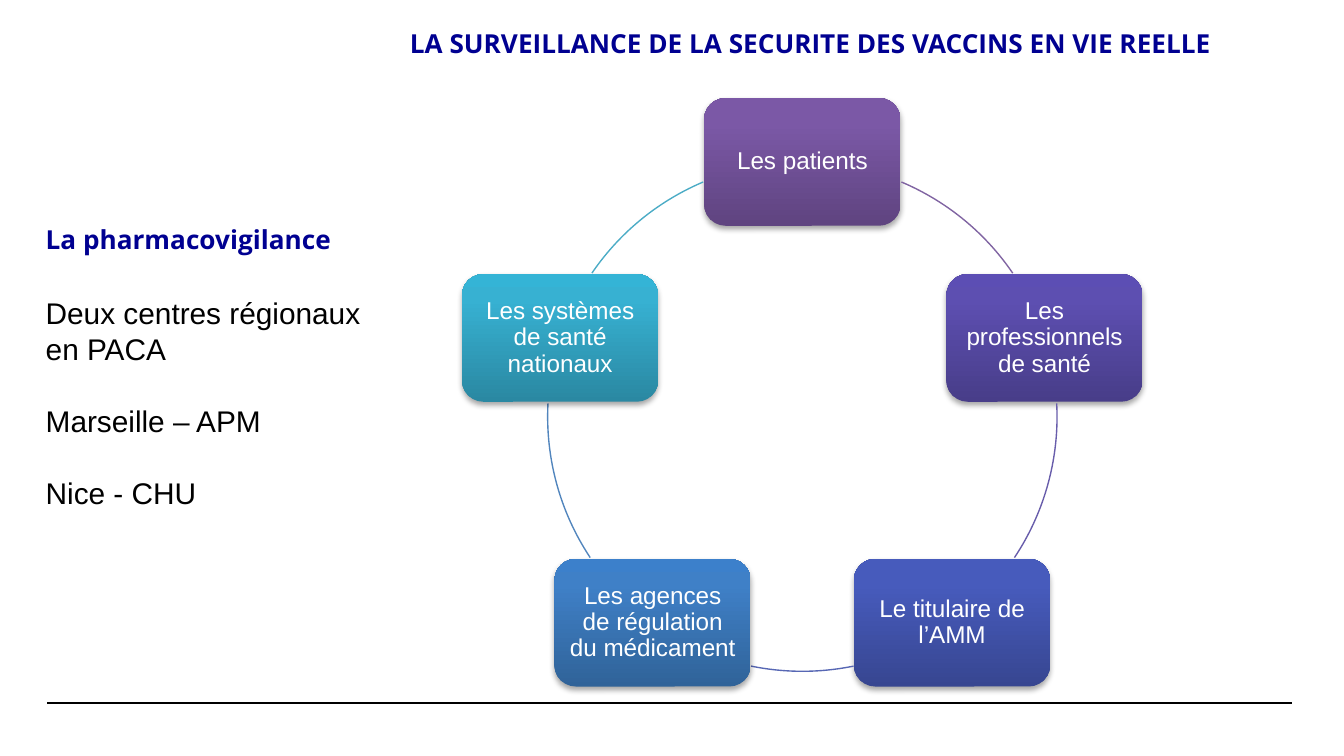
import math
from typing import NamedTuple

from pptx import Presentation
from pptx.dml.color import RGBColor
from pptx.enum.shapes import MSO_CONNECTOR, MSO_SHAPE
from pptx.enum.text import MSO_ANCHOR, MSO_AUTO_SIZE, PP_ALIGN
from pptx.oxml import parse_xml
from pptx.oxml.ns import nsdecls
from pptx.util import Inches, Pt

STRAIGHT = MSO_CONNECTOR.STRAIGHT
ROUNDED, ARC = MSO_SHAPE.ROUNDED_RECTANGLE, MSO_SHAPE.ARC
TOP, MIDDLE = MSO_ANCHOR.TOP, MSO_ANCHOR.MIDDLE
LEFT, CENTER = PP_ALIGN.LEFT, PP_ALIGN.CENTER
NO_AUTOFIT = MSO_AUTO_SIZE.NONE

NAVY, BLACK, WHITE = "000091", "000000", "FFFFFF"
CENTER_X, CENTER_Y, DIAMETER = 5.97, 3.1, 3.79
RADIUS = DIAMETER / 2
NODE_WIDTH, NODE_HEIGHT = 1.46, 0.95


class Actor(NamedTuple):
    label: str
    gradient: tuple[str, str, str]
    arc_color: str
    arc_start: float
    arc_end: float


class Entry(NamedTuple):
    text: str
    size: float
    font: str
    color: str
    bold: bool
    gap: float


ACTORS = [
    Actor("Les patients", ("5F4480", "7B58A6", "7C57A8"), "8064A2", 292.9, 325.7),
    Actor("Les professionnels de santé", ("483D89", "5D4FB1", "5C4EB4"), "685DAB", 357, 33.6),
    Actor("Le titulaire de l’AMM", ("374691", "475BBC", "455ABF"), "5767B4", 78.4, 101.6),
    Actor("Les agences de régulation du médicament", ("306399", "3F80C7", "3C80CB"), "5185BD", 146.4, 183),
    Actor("Les systèmes de santé nationaux", ("2A88A2", "37B1D2", "34B4D6"), "4BACC6", 214.3, 247.1),
]
ENTRIES = [
    Entry("La pharmacovigilance", 14, "Open Sans", NAVY, True, 0),
    Entry("Deux centres régionaux en PACA", 16, "Arial", BLACK, False, 21.7),
    Entry("Marseille – APM", 16, "Arial", BLACK, False, 19.4),
    Entry("Nice - CHU", 16, "Arial", BLACK, False, 19.4),
]


def rgb(color: str) -> RGBColor:
    return RGBColor.from_string(color)


def place(shape, left: float, top: float, width: float, height: float) -> None:
    shape.left, shape.top = Inches(left), Inches(top)
    shape.width, shape.height = Inches(width), Inches(height)


def set_frame(frame, anchor, margin: float | None = None) -> None:
    frame.word_wrap = True
    frame.auto_size = NO_AUTOFIT
    frame.vertical_anchor = anchor
    if margin is not None:
        frame.margin_left = frame.margin_right = Inches(margin)
        frame.margin_top = frame.margin_bottom = Inches(margin)


def write(para, text: str, *, size: float, font: str, color: str, bold: bool = False,
          align=LEFT, gap: float = 0, spacing: float = 1.0) -> None:
    para.alignment = align
    para.space_before, para.space_after = Pt(gap), Pt(0)
    para.line_spacing = spacing
    span = para.add_run()
    span.text = text
    span.font.size, span.font.name, span.font.bold = Pt(size), font, bold
    span.font.color.rgb = rgb(color)


def draw_rule(page, left: float, right: float, y: float) -> None:
    rule = page.shapes.add_connector(STRAIGHT, Inches(left), Inches(y), Inches(right), Inches(y))
    rule.line.color.rgb = rgb(BLACK)
    rule.line.width = Pt(0.8)
    rule._element.spPr.append(parse_xml(f"<a:effectLst {nsdecls('a')}/>"))


def draw_arc(page, actor: Actor) -> None:
    arc = page.shapes.add_shape(ARC, Inches(CENTER_X - RADIUS), Inches(CENTER_Y - RADIUS),
                                Inches(DIAMETER), Inches(DIAMETER))
    arc.adjustments[0] = actor.arc_start * 0.6
    arc.adjustments[1] = actor.arc_end * 0.6
    arc.fill.background()
    arc.line.color.rgb = rgb(actor.arc_color)
    arc.line.width = Pt(0.75)
    arc.shadow.inherit = False


def draw_node(page, actor: Actor, angle: float) -> None:
    left = CENTER_X + RADIUS * math.sin(angle) - NODE_WIDTH / 2
    top = CENTER_Y - RADIUS * math.cos(angle) - NODE_HEIGHT / 2
    node = page.shapes.add_shape(ROUNDED, Inches(left), Inches(top),
                                 Inches(NODE_WIDTH), Inches(NODE_HEIGHT))
    stops = "".join(f'<a:gs pos="{position}"><a:srgbClr val="{color}"/></a:gs>'
                    for position, color in zip((0, 80000, 100000), actor.gradient))
    properties = node._element.spPr
    properties.append(parse_xml(
        f'<a:gradFill {nsdecls("a")} rotWithShape="1"><a:gsLst>{stops}</a:gsLst>'
        '<a:lin ang="16200000" scaled="0"/></a:gradFill>'))
    node.line.fill.background()
    properties.append(parse_xml(
        f'<a:effectLst {nsdecls("a")}><a:outerShdw blurRad="{Pt(3.1)}" dist="{Pt(1.8)}" '
        f'dir="5400000" rotWithShape="0"><a:srgbClr val="{BLACK}"><a:alpha val="35000"/>'
        '</a:srgbClr></a:outerShdw></a:effectLst>'))
    set_frame(node.text_frame, MIDDLE, 0.05)
    write(node.text_frame.paragraphs[0], actor.label, size=13, font="Arial",
          color=WHITE, align=CENTER, spacing=0.9)


def fill_list(body) -> None:
    place(body, 0.24, 1.61, 2.83, 2.26)
    set_frame(body.text_frame, TOP)
    for index, entry in enumerate(ENTRIES):
        para = body.text_frame.add_paragraph() if index else body.text_frame.paragraphs[0]
        properties = para._p.get_or_add_pPr()
        properties.set("marL", "0")
        properties.set("indent", "0")
        properties.append(parse_xml(f"<a:buNone {nsdecls('a')}/>"))
        write(para, entry.text, size=entry.size, font=entry.font, color=entry.color,
              bold=entry.bold, gap=entry.gap)


def main() -> None:
    deck = Presentation()
    deck.slide_width = Inches(10)
    deck.slide_height = deck.slide_width * 9 // 16
    page = deck.slides.add_slide(deck.slide_layouts[1])

    title = page.shapes.title
    place(title, 2.95, 0.15, 6.61, 0.57)
    set_frame(title.text_frame, TOP)
    write(title.text_frame.paragraphs[0],
          "LA SURVEILLANCE DE LA SECURITE DES VACCINS EN VIE REELLE",
          size=14, font="Open Sans", color=NAVY, bold=True)
    fill_list(page.placeholders[1])

    for left in (0.35, 0.39):
        draw_rule(page, left, left + 9.22, 5.23)
    for index, actor in enumerate(ACTORS):
        draw_node(page, actor, index * math.tau / len(ACTORS))
        draw_arc(page, actor)

    deck.save("out.pptx")


if __name__ == "__main__":
    main()
